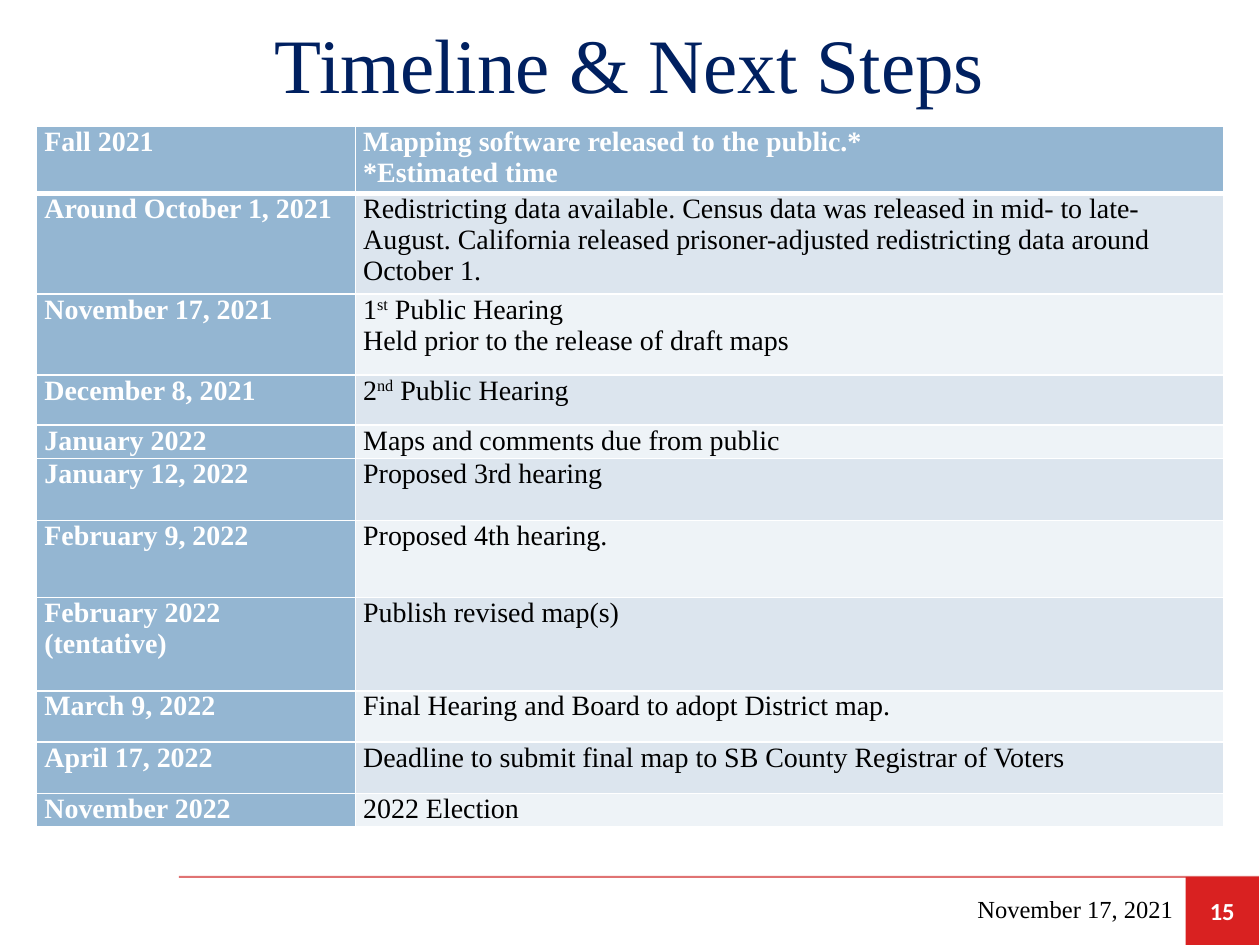
from lxml.etree import SubElement
from pptx import Presentation
from pptx.dml.color import RGBColor
from pptx.enum.shapes import MSO_CONNECTOR, MSO_SHAPE
from pptx.enum.text import MSO_ANCHOR, PP_ALIGN
from pptx.oxml.ns import qn
from pptx.util import Pt

THEME = {
    "serif": "Times New Roman", "sans": "Calibri",
    "title_size": 44, "table_size": 16, "footer_size": 14,
    "navy": "002060", "black": "000000", "white": "FFFFFF",
    "blue": "94B6D2", "bands": ("EEF3F7", "DCE5EE"),
    "red": "D92121", "rule": "C80000",
}

TITLE = "Timeline & Next Steps"
MEETING_DATE = "November 17, 2021"
PAGE = "15"
# ^ marks the start and end of superscript text
TIMELINE = [
    ("Fall 2021", ["Mapping software released to the public.*", "*Estimated time"], 35.4),
    ("Around October 1, 2021 ",
     ["Redistricting data available. Census data was released in mid- to late-August. "
      "California released prisoner-adjusted redistricting data around October 1."], 53.1),
    ("November 17, 2021",
     ["1^st^ Public Hearing", "Held prior to the release of draft maps"], 46.3),
    ("December 8, 2021", ["2^nd^ Public Hearing"], 28.6),
    ("January 2022", ["Maps and comments due from public"], 17.8),
    ("January 12, 2022", ["Proposed 3rd hearing"], 35.4),
    ("February 9, 2022", ["Proposed 4th hearing."], 44),
    ("February 2022 (tentative)", ["Publish revised map(s)"], 53.4),
    ("March 9, 2022", ["Final Hearing and Board to adopt District map."], 29.3),
    ("April 17, 2022", ["Deadline to submit final map to SB County Registrar of Voters"], 29.3),
    ("November 2022", ["2022 Election"], 17.6),
]
COLUMNS = (182.2, 496.1)
TABLE_LEFT, TABLE_TOP = 20.9, 72
FOOTER_TOP, FOOTER_RIGHT = 501.1, 719.3
PAGE_WIDTH, PAGE_HEIGHT = 41.8, 38.9


def rgb(name):
    return RGBColor.from_string(THEME.get(name, name))


def write(frame, lines, size, color="black", font="serif", bold=False,
          align=PP_ALIGN.LEFT, anchor=MSO_ANCHOR.MIDDLE):
    frame.word_wrap = True
    frame.vertical_anchor = anchor
    for index, line in enumerate(lines):
        paragraph = frame.add_paragraph() if index else frame.paragraphs[0]
        paragraph.alignment = align
        for part, words in enumerate(line.split("^")):
            run = paragraph.add_run()
            run.text = words
            run.font.name = THEME[font]
            run.font.size = Pt(THEME[size])
            run.font.bold = bold
            run.font.color.rgb = rgb(color)
            if part % 2:
                run.font._element.set("baseline", "30000")


def add_border(cell, side, width):
    border = SubElement(cell._tc.get_or_add_tcPr(), qn("a:" + side), w=str(Pt(width)))
    fill = SubElement(border, qn("a:solidFill"))
    SubElement(fill, qn("a:srgbClr"), val=THEME["white"])


def fill_cell(cell, lines, fill, heading, header_row, below_header):
    cell.margin_left = cell.margin_right = Pt(4.5)
    cell.margin_top = cell.margin_bottom = 0
    for side in ("lnL", "lnR", "lnT", "lnB"):
        thick = header_row and side == "lnB" or below_header and side == "lnT"
        add_border(cell, side, 3 if thick else 1)
    cell.fill.solid()
    cell.fill.fore_color.rgb = rgb(fill)
    write(cell.text_frame, lines, "table_size", bold=heading,
          color="white" if heading else "black", anchor=MSO_ANCHOR.TOP)


def add_timeline(slide):
    heights = [height for _, _, height in TIMELINE]
    table = slide.shapes.add_table(
        len(TIMELINE), len(COLUMNS), Pt(TABLE_LEFT), Pt(TABLE_TOP),
        Pt(sum(COLUMNS)), Pt(sum(heights))).table
    for column, width in zip(table.columns, COLUMNS):
        column.width = Pt(width)
    for index, (when, steps, height) in enumerate(TIMELINE):
        table.rows[index].height = Pt(height)
        for column, lines in enumerate(([when], steps)):
            heading = index == 0 or column == 0
            fill = "blue" if heading else THEME["bands"][index % 2]
            fill_cell(table.cell(index, column), lines, fill, heading, index == 0, index == 1)


def add_footer(slide):
    rule = slide.shapes.add_connector(
        MSO_CONNECTOR.STRAIGHT, Pt(102.2), Pt(FOOTER_TOP), Pt(FOOTER_RIGHT), Pt(FOOTER_TOP))
    rule.line.width = Pt(1.25)
    rule.line.color.rgb = rgb("rule")
    properties = rule._element.spPr
    SubElement(properties.find(".//" + qn("a:srgbClr")), qn("a:alpha"), val="55000")
    SubElement(properties, qn("a:effectLst"))

    page_left = FOOTER_RIGHT - PAGE_WIDTH
    page = slide.shapes.add_shape(MSO_SHAPE.RECTANGLE, Pt(page_left), Pt(FOOTER_TOP),
                                  Pt(PAGE_WIDTH), Pt(PAGE_HEIGHT))
    page.shadow.inherit = False
    page.fill.solid()
    page.fill.fore_color.rgb = rgb("red")
    page.line.fill.background()
    write(page.text_frame, [PAGE], "footer_size", color="white", font="sans",
          bold=True, align=PP_ALIGN.CENTER)

    date = slide.shapes.add_textbox(Pt(page_left - 210.2), Pt(504.7), Pt(210.2), Pt(28.8))
    write(date.text_frame, [MEETING_DATE], "footer_size", align=PP_ALIGN.RIGHT)


def main():
    deck = Presentation()
    deck.slide_width, deck.slide_height = Pt(720), Pt(540)
    slide = deck.slides.add_slide(deck.slide_layouts[5])
    add_footer(slide)
    title = slide.shapes.title
    title.left, title.top, title.width, title.height = 0, 0, Pt(720), Pt(72)
    write(title.text_frame, [TITLE], "title_size", color="navy", align=PP_ALIGN.CENTER)
    add_timeline(slide)
    deck.save("out.pptx")


if __name__ == "__main__":
    main()
